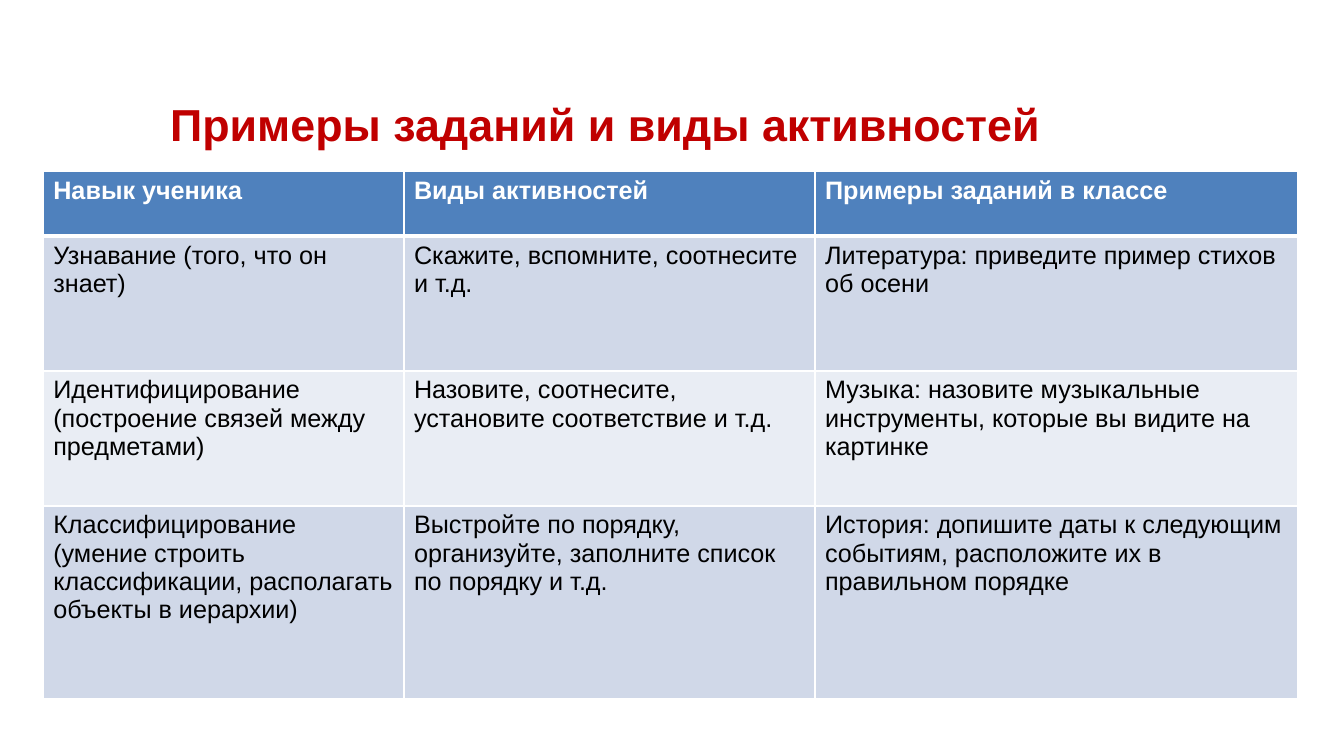
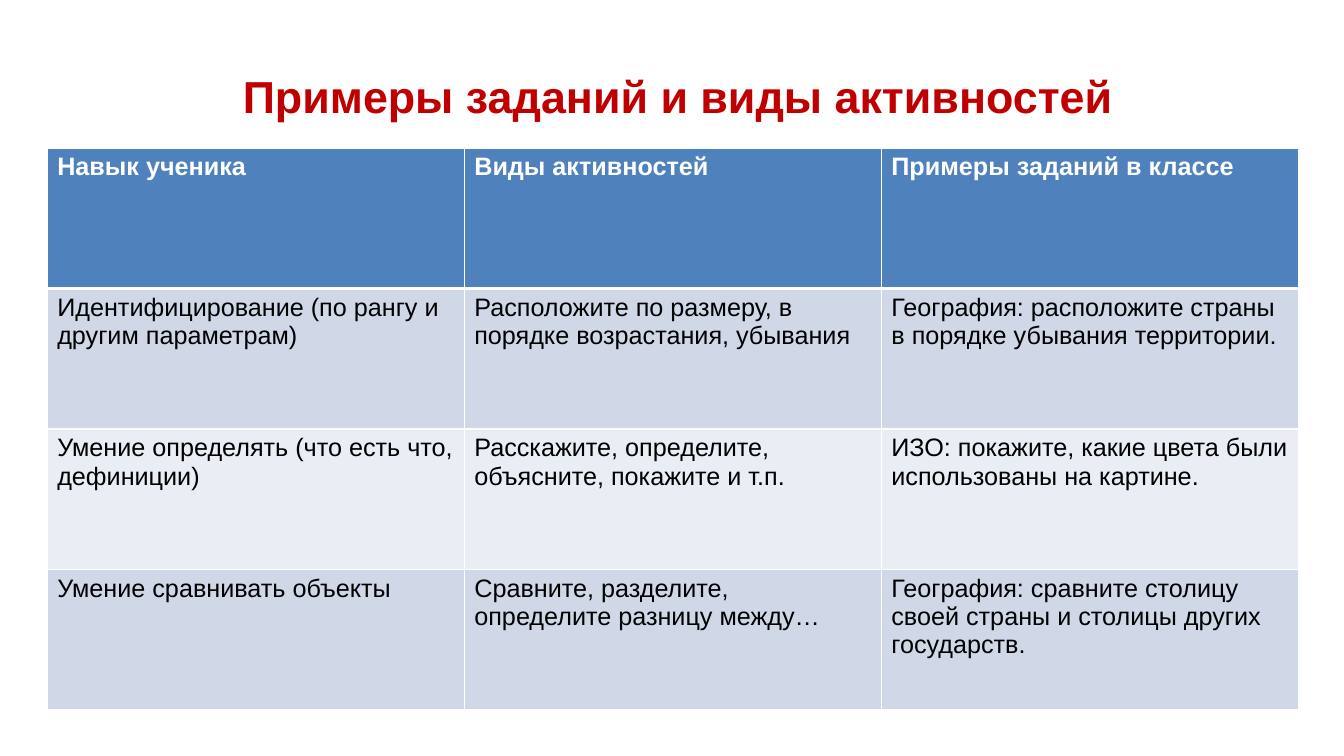
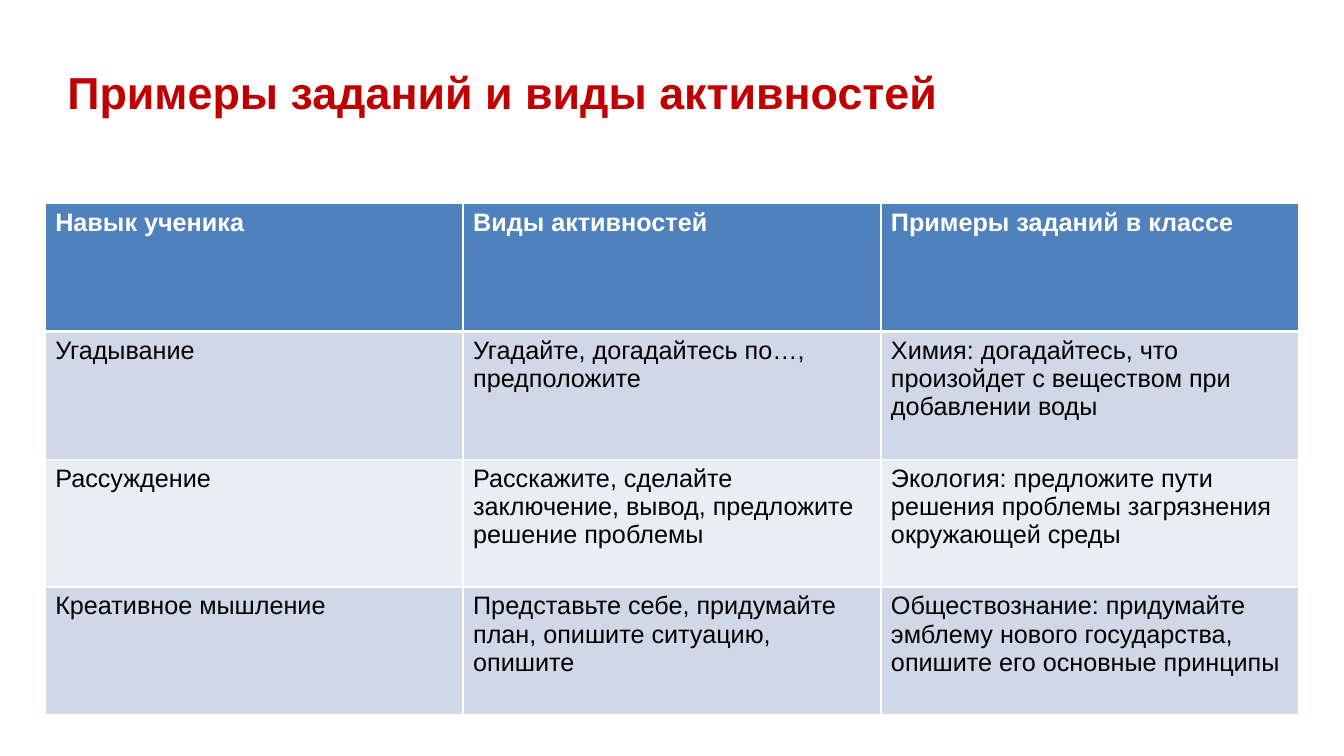
from dataclasses import dataclass

from lxml import etree
from pptx import Presentation
from pptx.dml.color import RGBColor
from pptx.enum.text import MSO_ANCHOR
from pptx.oxml.ns import qn
from pptx.util import Cm, Pt

MIDDLE = MSO_ANCHOR.MIDDLE


@dataclass(frozen=True)
class Theme:
    font: str = "Arial"
    title_size: int = 32
    cell_size: int = 18
    title: str = "C00000"
    header: str = "4F81BD"
    header_text: str = "FFFFFF"
    body_text: str = "000000"
    bands: tuple = ("D0D8E8", "E9EDF4")
    border: str = "FFFFFF"
    thin: int = 1
    thick: int = 3


THEME = Theme()
TITLE = "Примеры заданий и виды активностей"
HEADER = ("Навык ученика", "Виды активностей", "Примеры заданий в классе")

SLIDES = [
    {
        "title_box": (4.29, 1.27, 29.21, 3.68),
        "table_at": (1.09, 4.32),
        "columns": (9.09, 10.36, 12.17),
        "heights": (1.63, 3.4, 3.4, 4.85),
        "rows": [
            ("Узнавание (того, что он знает)",
             "Скажите, вспомните, соотнесите и т.д.",
             "Литература: приведите пример стихов об осени"),
            ("Идентифицирование (построение связей между предметами)",
             "Назовите, соотнесите, установите соответствие и т.д.",
             "Музыка: назовите музыкальные инструменты, которые вы видите на картинке"),
            ("Классифицирование (умение строить классификации, располагать объекты в иерархии)",
             "Выстройте по порядку, организуйте, заполните список по порядку и т.д.",
             "История: допишите даты к следующим событиям, расположите их в правильном порядке"),
        ],
    },
    {
        "title_box": (6.12, -0.48, 22.81, 5.79),
        "table_at": (1.19, 3.73),
        "columns": (10.51,) * 3,
        "heights": (3.54,) * 4,
        "rows": [
            ("Идентифицирование (по рангу и другим параметрам)",
             "Расположите по размеру, в порядке возрастания, убывания",
             "География: расположите страны в порядке убывания территории."),
            ("Умение определять (что есть что, дефиниции)",
             "Расскажите, определите, объясните, покажите и т.п.",
             "ИЗО: покажите, какие цвета были использованы на картине."),
            ("Умение сравнивать объекты",
             "Сравните, разделите, определите разницу между…",
             "География: сравните столицу своей страны и столицы других государств."),
        ],
    },
    {
        "title_box": (1.7, 0.56, 30.48, 3.48),
        "table_at": (1.14, 5.13),
        "columns": (10.53,) * 3,
        "heights": (3.22,) * 4,
        "rows": [
            ("Угадывание",
             "Угадайте, догадайтесь по…, предположите",
             "Химия: догадайтесь, что произойдет с веществом при добавлении воды"),
            ("Рассуждение",
             "Расскажите, сделайте заключение, вывод, предложите решение проблемы",
             "Экология: предложите пути решения проблемы загрязнения окружающей среды"),
            ("Креативное мышление",
             "Представьте себе, придумайте план, опишите ситуацию, опишите",
             "Обществознание: придумайте эмблему нового государства, опишите его основные принципы"),
        ],
    },
]


def write(frame, text, size, color, bold):
    paragraph = frame.paragraphs[0]
    paragraph.text = text
    font = paragraph.font
    font.name, font.size, font.bold = THEME.font, Pt(size), bold
    font.color.rgb = RGBColor.from_string(color)


def add_title(slide, place):
    frame = slide.shapes.add_textbox(*map(Cm, place)).text_frame
    frame.word_wrap = True
    frame.vertical_anchor = MIDDLE
    frame.margin_left = frame.margin_top = frame.margin_right = frame.margin_bottom = 0
    write(frame, TITLE, THEME.title_size, THEME.title, True)


def set_borders(cell, top, bottom):
    properties = cell._tc.get_or_add_tcPr()
    widths = {"L": THEME.thin, "R": THEME.thin, "T": top, "B": bottom}
    for side, width in widths.items():
        line = etree.SubElement(properties, qn(f"a:ln{side}"), w=str(Pt(width)))
        fill = etree.SubElement(line, qn("a:solidFill"))
        etree.SubElement(fill, qn("a:srgbClr"), val=THEME.border)


def style_cell(cell, text, row):
    is_header = row == 0
    set_borders(cell,
                THEME.thick if row == 1 else THEME.thin,
                THEME.thick if is_header else THEME.thin)
    fill = THEME.header if is_header else THEME.bands[(row - 1) % 2]
    cell.fill.solid()
    cell.fill.fore_color.rgb = RGBColor.from_string(fill)
    color = THEME.header_text if is_header else THEME.body_text
    write(cell.text_frame, text, THEME.cell_size, color, is_header)


def add_skill_table(slide, content):
    rows = [HEADER, *content["rows"]]
    columns, heights = content["columns"], content["heights"]
    left, top = content["table_at"]
    table = slide.shapes.add_table(
        len(rows), len(columns), Cm(left), Cm(top),
        Cm(sum(columns)), Cm(sum(heights))).table
    for column, width in zip(table.columns, columns):
        column.width = Cm(width)
    for index, (row, height) in enumerate(zip(table.rows, heights)):
        row.height = Cm(height)
        for cell, text in zip(row.cells, rows[index]):
            style_cell(cell, text, index)


def main():
    deck = Presentation()
    deck.slide_width, deck.slide_height = Cm(33.87), Cm(19.05)
    blank = deck.slide_layouts[6]
    for content in SLIDES:
        slide = deck.slides.add_slide(blank)
        add_title(slide, content["title_box"])
        add_skill_table(slide, content)
    deck.save("out.pptx")


if __name__ == "__main__":
    main()
